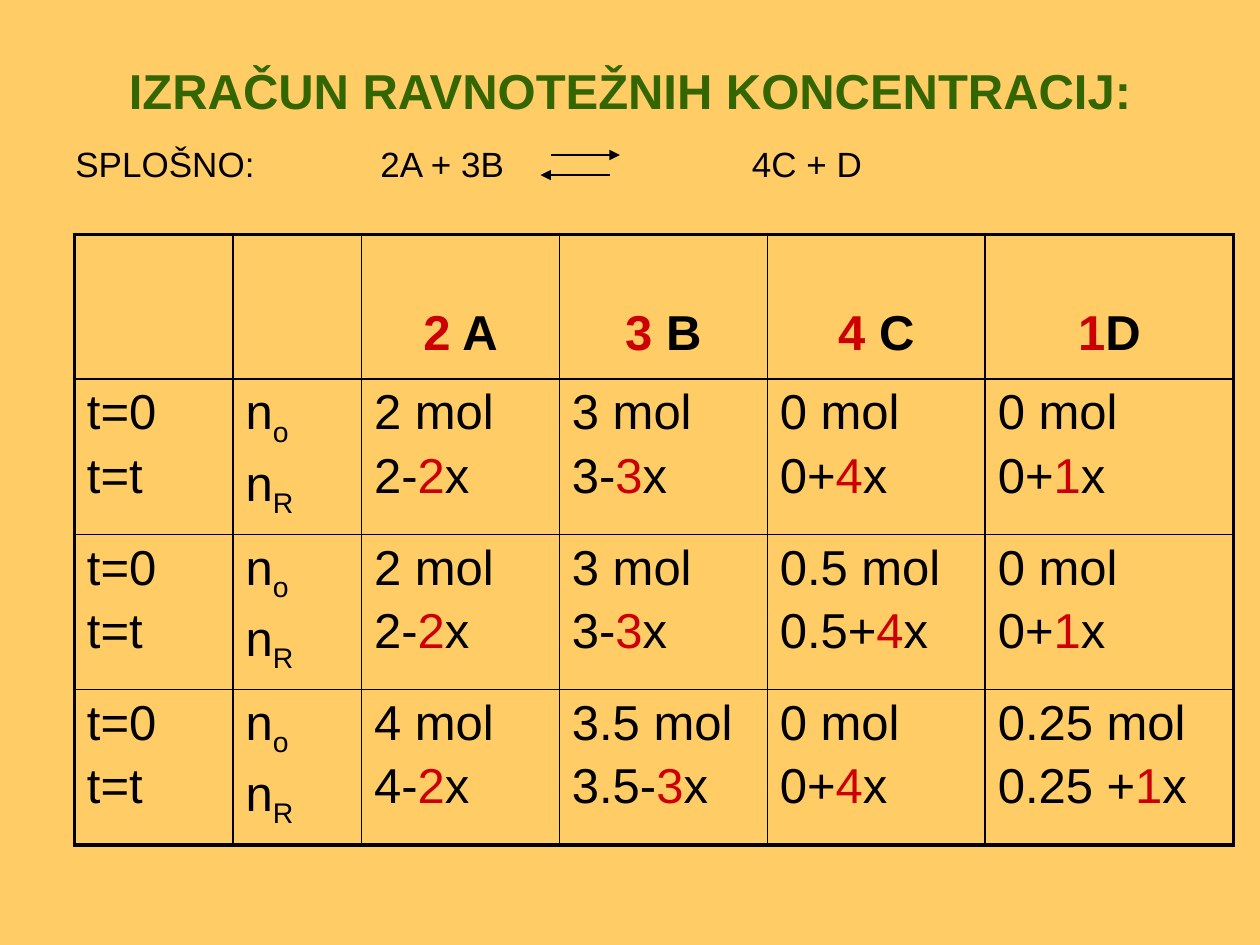
from lxml import etree
from pptx import Presentation
from pptx.dml.color import RGBColor
from pptx.enum.shapes import MSO_CONNECTOR
from pptx.enum.text import MSO_ANCHOR, PP_ALIGN
from pptx.oxml.ns import qn
from pptx.util import Emu, Inches, Pt

STRAIGHT = MSO_CONNECTOR.STRAIGHT
MIDDLE, BOTTOM = MSO_ANCHOR.MIDDLE, MSO_ANCHOR.BOTTOM
CENTER = PP_ALIGN.CENTER

SAND = RGBColor(0xFF, 0xCC, 0x66)
GREEN = RGBColor(0x33, 0x66, 0x00)
RED = RGBColor(0xCC, 0x00, 0x00)
BLACK = RGBColor(0, 0, 0)
FONT = "Arial"

# Table grid, in inches
TABLE_LEFT, TABLE_TOP = 0.59, 1.86
COLUMNS = [1.26, 1.02, 1.57, 1.65, 1.73, 1.97]
HEADER_HEIGHT, ROW_HEIGHT = 1.15, 1.23
THIN, THICK = 1, 2.25

# Reaction: coefficient and species, then the starting amounts with signs
SPECIES = [("2", " A"), ("3", " B"), ("4", " C"), ("1", "D")]
EXPERIMENTS = [
    ["2-", "3-", "0+", "0+"],
    ["2-", "3-", "0.5+", "0+"],
    ["4-", "3.5-", "0+", "0.25 +"],
]


def style(font, size, color=BLACK, bold=False):
    font.name, font.size, font.bold = FONT, Pt(size), bold
    font.color.rgb = color


def add_text(slide, left, top, width, height, text, size, color=BLACK, bold=False):
    frame = slide.shapes.add_textbox(
        Inches(left), Inches(top), Inches(width), Inches(height)).text_frame
    frame.word_wrap = True
    paragraph = frame.paragraphs[0]
    paragraph.text = text
    for run in paragraph.runs:
        style(run.font, size, color, bold)
    return frame


def add_tab_stops(paragraph, positions):
    stops = etree.SubElement(paragraph._p.get_or_add_pPr(), qn("a:tabLst"))
    for position in positions:
        etree.SubElement(stops, qn("a:tab"), pos=str(Inches(position)), algn="l")


def add_arrow(slide, start, end, y):
    arrow = slide.shapes.add_connector(
        STRAIGHT, Inches(start), Inches(y), Inches(end), Inches(y))
    arrow.line.color.rgb = BLACK
    arrow.line.width = Pt(1.5)
    etree.SubElement(arrow.line._get_or_add_ln(), qn("a:tailEnd"), type="triangle")
    etree.SubElement(arrow._element.spPr, qn("a:effectLst"))


def set_borders(cell, widths):
    properties = cell._tc.get_or_add_tcPr()
    for index, (side, width) in enumerate(zip("LRTB", widths)):
        line = etree.Element(qn(f"a:ln{side}"), w=str(Pt(width)))
        fill = etree.SubElement(line, qn("a:solidFill"))
        etree.SubElement(fill, qn("a:srgbClr"), val=str(BLACK))
        properties.insert(index, line)


def fill_cell(cell, lines, bold=False):
    """Each line is a list of (text, kind); kind is "", "red" or "sub"."""
    frame = cell.text_frame
    for index, line in enumerate(lines):
        paragraph = frame.add_paragraph() if index else frame.paragraphs[0]
        if index:
            paragraph.space_before = Pt(5)
        for text, kind in line:
            run = paragraph.add_run()
            run.text = text
            style(run.font, 28, RED if kind == "red" else BLACK, bold)
            if kind == "sub":
                run.font._element.set("baseline", "-25000")


def add_amounts_table(slide):
    row_count, column_count = len(EXPERIMENTS) + 1, len(COLUMNS)
    heights = [HEADER_HEIGHT] + [ROW_HEIGHT] * len(EXPERIMENTS)
    table = slide.shapes.add_table(
        row_count, column_count, Inches(TABLE_LEFT), Inches(TABLE_TOP),
        Inches(sum(COLUMNS)), Inches(sum(heights))).table
    table.first_row = table.horz_banding = False
    for column, width in zip(table.columns, COLUMNS):
        column.width = Inches(width)
    for row, height in zip(table.rows, heights):
        row.height = Inches(height)

    # Thick outer frame, thin inner lines
    for r in range(row_count):
        for c in range(column_count):
            cell = table.cell(r, c)
            cell.fill.background()
            outer = (c == 0, c == column_count - 1, r == 0, r == row_count - 1)
            set_borders(cell, [THICK if edge else THIN for edge in outer])

    # Header: coefficients and species
    for c, (coefficient, name) in enumerate(SPECIES, start=2):
        cell = table.cell(0, c)
        cell.vertical_anchor = BOTTOM
        cell.margin_bottom = Inches(0.15)
        fill_cell(cell, [[(coefficient, "red"), (name, "")]], bold=True)
        cell.text_frame.paragraphs[0].alignment = CENTER

    # Starting and equilibrium amounts
    for r, starts in enumerate(EXPERIMENTS, start=1):
        fill_cell(table.cell(r, 0), [[("t=0", "")], [("t=t", "")]])
        fill_cell(table.cell(r, 1),
                  [[("n", ""), ("o", "sub")], [("n", ""), ("R", "sub")]])
        for c, (start, (coefficient, _)) in enumerate(zip(starts, SPECIES), start=2):
            amount = start.rstrip(" +-")
            fill_cell(table.cell(r, c), [
                [(f"{amount} mol", "")],
                [(start, ""), (coefficient, "red"), ("x", "")]])


def main():
    deck = Presentation()
    deck.slide_width, deck.slide_height = Inches(10), Inches(7.5)
    slide = deck.slides.add_slide(deck.slide_layouts[6])
    slide.background.fill.solid()
    slide.background.fill.fore_color.rgb = SAND

    # Title
    title = add_text(slide, 0.5, 0.3, 9, 0.83,
                     "IZRAČUN RAVNOTEŽNIH KONCENTRACIJ:", 28, GREEN, bold=True)
    title.vertical_anchor = MIDDLE
    title.paragraphs[0].alignment = CENTER

    # General reaction with equilibrium arrows
    reaction = add_text(slide, 0.5, 1.07, 9.3, 0.45,
                        "SPLOŠNO:\t2A + 3B\t4C + D", 20)
    reaction.margin_top = Emu(Inches(0.06))
    add_tab_stops(reaction.paragraphs[0], [2.42, 5.37])
    add_arrow(slide, 4.37, 4.92, 1.23)
    add_arrow(slide, 4.84, 4.29, 1.39)

    add_amounts_table(slide)
    deck.save("out.pptx")


if __name__ == "__main__":
    main()
